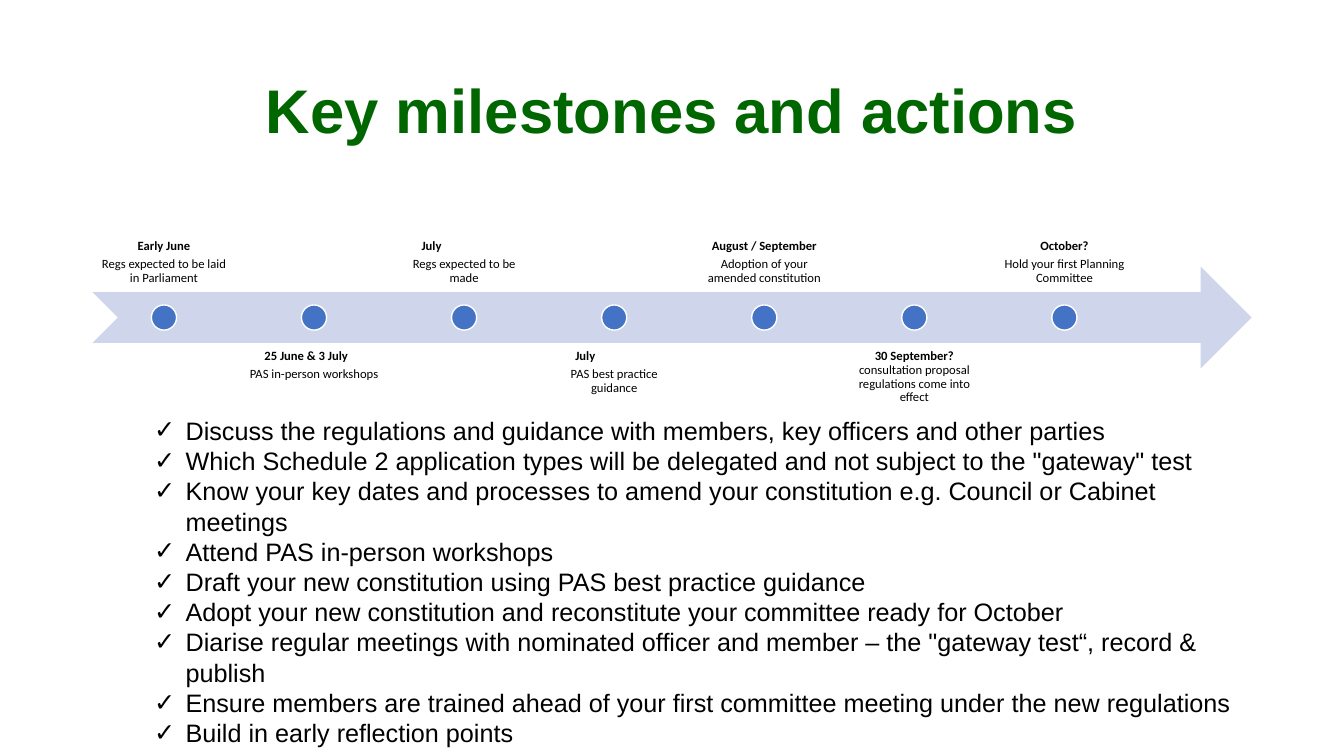
from pptx import Presentation
from pptx.dml.color import RGBColor
from pptx.enum.shapes import MSO_SHAPE as Shape
from pptx.enum.text import MSO_ANCHOR as Anchor, PP_ALIGN as Align
from pptx.oxml import parse_xml
from pptx.oxml.ns import nsdecls
from pptx.util import Pt

GREEN = RGBColor(0x00, 0x66, 0x00)
BLACK = RGBColor(0x00, 0x00, 0x00)
WHITE = RGBColor(0xFF, 0xFF, 0xFF)
PALE_BLUE = RGBColor(0xCF, 0xD5, 0xEA)
BLUE = RGBColor(0x44, 0x72, 0xC4)

MILESTONES = [
    ("Early June", "Regs expected to be laid in Parliament", None),
    ("25 June & 3 July", "PAS in-person workshops", 10.7),
    ("July", "Regs expected to be made", 15.7),
    ("July", "PAS best practice guidance", 18.3),
    ("August / September", "Adoption of your amended constitution", None),
    ("30 September? ", "consultation proposal regulations come into effect", None),
    ("October?", "Hold your first Planning Committee", None),
]
ACTIONS = [
    "Discuss the regulations and guidance with members, key officers and other parties",
    "Which Schedule 2 application types will be delegated and not subject to the \"gateway\" test",
    "Know your key dates and processes to amend your constitution e.g. Council or Cabinet meetings",
    "Attend PAS in-person workshops",
    "Draft your new constitution using PAS best practice guidance",
    "Adopt your new constitution and reconstitute your committee ready for October",
    "Diarise regular meetings with nominated officer and member – the \"gateway test“, record & publish",
    "Ensure members are trained ahead of your first committee meeting under the new regulations",
    "Build in early reflection points",
]


def add_text_frame(slide, left, top, width, height, anchor=Anchor.TOP):
    """Add a wrapping text box and return its text frame."""
    frame = slide.shapes.add_textbox(Pt(left), Pt(top), Pt(width), Pt(height)).text_frame
    frame.word_wrap = True
    frame.vertical_anchor = anchor
    return frame


def style_font(font, name, size, color, bold=False):
    """Set the face, size, colour and weight of a font."""
    font.name = name
    font.size = Pt(size)
    font.color.rgb = color
    font.bold = bold


def next_paragraph(frame, index):
    """Return the first paragraph of a frame, or a new one after it."""
    return frame.add_paragraph() if index else frame.paragraphs[0]


def add_title(slide, left, top, width, height):
    """Place the centred slide title in the given box."""
    paragraph = add_text_frame(slide, left, top, width, height, Anchor.MIDDLE).paragraphs[0]
    paragraph.text = "Key milestones and actions"
    paragraph.alignment = Align.CENTER
    paragraph.line_spacing = 0.9
    style_font(paragraph.font, "Arial", 44, GREEN, True)


def add_filled_shape(slide, preset, left, top, width, height, color):
    """Add a preset shape with a plain fill and no shadow."""
    shape = slide.shapes.add_shape(preset, Pt(left), Pt(top), Pt(width), Pt(height))
    shape.shadow.inherit = False
    shape.fill.solid()
    shape.fill.fore_color.rgb = color
    shape.line.fill.background()
    return shape


def add_label(slide, left, top, width, height, anchor, milestone):
    """Write a milestone's bold date and its description."""
    date, description, indent = milestone
    frame = add_text_frame(slide, left, top, width, height, anchor)
    frame.margin_left = frame.margin_right = frame.margin_top = frame.margin_bottom = Pt(5)
    shares_paragraph = date.endswith(" ")
    for index, text in enumerate((date, description)):
        paragraph = next_paragraph(frame, 0 if shares_paragraph else index)
        paragraph.alignment = Align.CENTER
        paragraph.line_spacing = 0.9
        paragraph.space_after = Pt(3.15)
        if index == 0 and indent:
            paragraph.alignment = Align.LEFT
            paragraph._p.get_or_add_pPr().set("marL", str(Pt(indent)))
        run = paragraph.add_run()
        run.text = text
        style_font(run.font, "Calibri", 9, BLACK, index == 0)


def add_timeline(slide, left, top, width, height):
    """Draw the arrow with dots and labels alternating above and below."""
    band = height / 2.5
    arrow_top = top + band * 0.75
    add_filled_shape(slide, Shape.NOTCHED_RIGHT_ARROW, left, arrow_top, width, band, PALE_BLUE)
    label_width, step, dot = 102.2, 107.2, 18
    for index, milestone in enumerate(MILESTONES):
        label_left = left + index * step
        below = index % 2
        label_top = top + below * band * 1.5
        anchor = Anchor.TOP if below else Anchor.BOTTOM
        add_label(slide, label_left, label_top, label_width, band, anchor, milestone)
        marker = add_filled_shape(slide, Shape.OVAL, label_left + (label_width - dot) / 2,
                                  arrow_top + (band - dot) / 2, dot, dot, BLUE)
        marker.line.color.rgb = WHITE
        marker.line.width = Pt(1)


def add_actions(slide, left, top, width, height):
    """List the actions with tick bullets in the given box."""
    frame = add_text_frame(slide, left, top, width, height)
    for index, action in enumerate(ACTIONS):
        paragraph = next_paragraph(frame, index)
        paragraph.text = action
        properties = paragraph._p.get_or_add_pPr()
        properties.set("marL", str(Pt(22.5)))
        properties.set("indent", str(Pt(-22.5)))
        properties.append(parse_xml(f'<a:buFont {nsdecls("a")} typeface="Arial"/>'))
        properties.append(parse_xml(f'<a:buChar {nsdecls("a")} char="✓"/>'))
        style_font(paragraph.font, "Arial", 18, BLACK)


def main():
    """Build and save the milestones slide."""
    presentation = Presentation()
    presentation.slide_width, presentation.slide_height = Pt(960), Pt(540)
    slide = presentation.slides.add_slide(presentation.slide_layouts[6])
    add_title(slide, 66, 28.8, 828, 104.4)
    add_timeline(slide, 66, 135.8, 828, 182)
    add_actions(slide, 103, 293, 800, 247)
    presentation.save("out.pptx")


if __name__ == "__main__":
    main()
